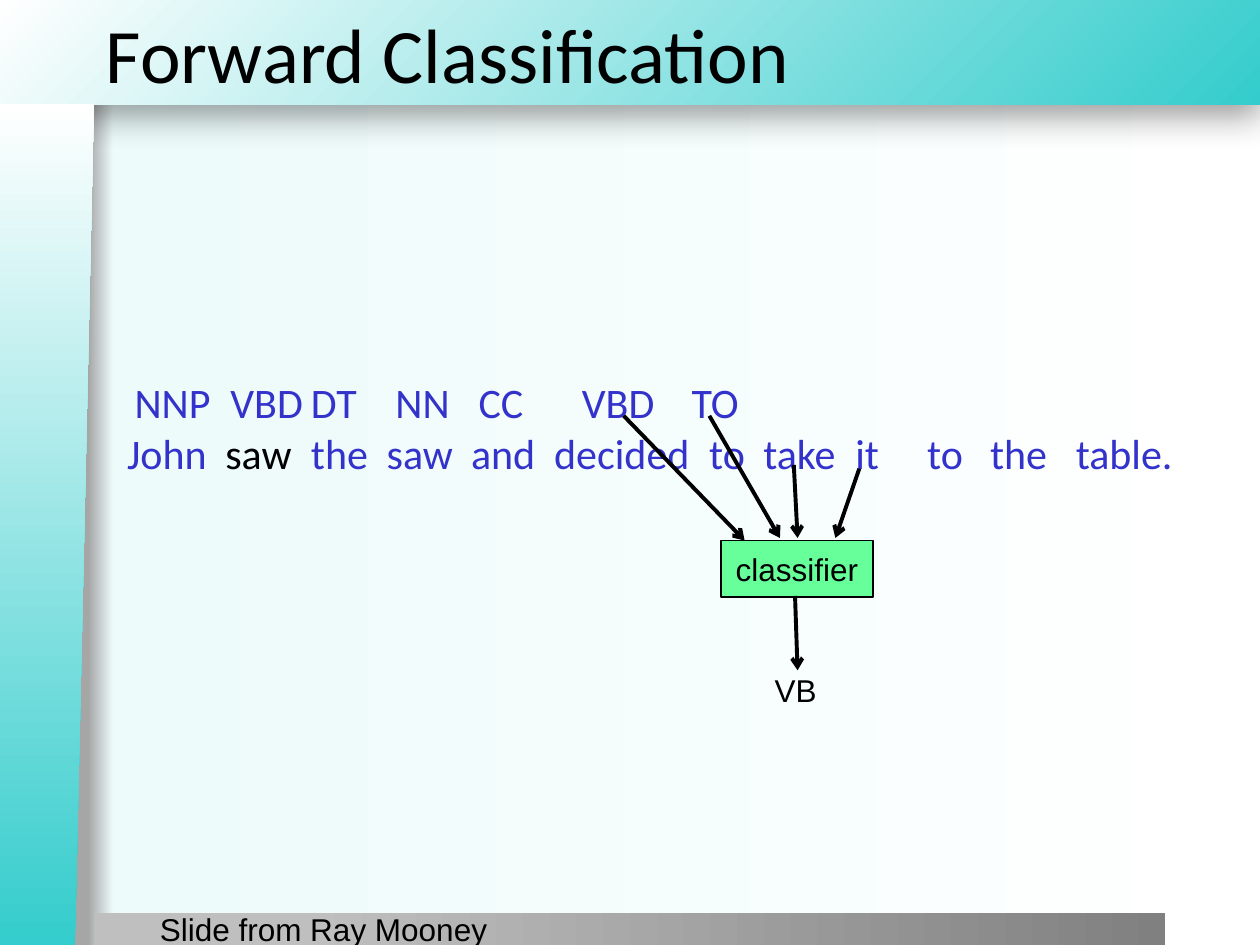
from dataclasses import dataclass
from typing import NamedTuple

from lxml.etree import SubElement
from pptx import Presentation
from pptx.dml.color import RGBColor
from pptx.enum.shapes import MSO_CONNECTOR as Connector, MSO_SHAPE as Preset
from pptx.enum.text import MSO_ANCHOR as Anchor, MSO_AUTO_SIZE as AutoSize, PP_ALIGN as Align
from pptx.oxml.ns import qn
from pptx.util import Inches, Pt


@dataclass(frozen=True)
class Theme:
    teal: str = "34CCCC"
    white: str = "FFFFFF"
    black: str = "000000"
    blue: str = "3333CC"
    green: str = "66FF99"
    edge_gray: str = "A6A6A6"
    pale: str = "EDFBFB"
    light_gray: str = "BFBFBF"
    dark_gray: str = "808080"
    heading_font: str = "Calibri"
    label_font: str = "Arial"
    title_size: int = 44
    sentence_size: int = 24
    label_size: int = 18


class Box(NamedTuple):
    left: float
    top: float
    width: float
    height: float


class Stop(NamedTuple):
    percent: int
    color: str


class Band(NamedTuple):
    preset: Preset
    box: Box
    stops: list[Stop]
    corner: bool = False
    rotation: int = 0
    flipped: bool = False
    shadow: bool = False


class Arrow(NamedTuple):
    start: tuple[float, float]
    end: tuple[float, float]


class Word(NamedTuple):
    text: str
    left: float
    color: str


class Label(NamedTuple):
    text: str
    box: Box
    align: Align


THEME = Theme()
TEAL_FADE = [Stop(0, THEME.teal), Stop(100, THEME.white)]
BACKGROUND = [Stop(7, THEME.edge_gray), Stop(9, THEME.pale), Stop(100, THEME.white)]
BANDS = [
    Band(Preset.RECTANGLE, Box(-0.01, 0, 10.01, 0.83), TEAL_FADE, corner=True, shadow=True),
    Band(Preset.RECTANGLE, Box(0.75, 7.25, 8.5, 0.26),
         [Stop(20, THEME.light_gray), Stop(100, THEME.dark_gray)]),
    Band(Preset.FLOWCHART_MANUAL_INPUT, Box(-2.97, 3.79, 6.68, 0.75), TEAL_FADE,
         rotation=270, flipped=True),
]
TITLE_BOX = Box(0.74, -0.08, 9.26, 1)
SENTENCE_BOX = Box(0.91, 2.94, 8.82, 0.91)
TAGS = [Word(text, left, THEME.blue) for text, left in [
    ("NNP", 0.06), ("VBD", 0.82), ("DT", 1.46), ("NN", 2.13), ("CC", 2.79),
    ("VBD", 3.61), ("TO", 4.48)]]
WORDS = [Word(text, left, THEME.black if left == 0.78 else THEME.blue) for text, left in [
    ("John", 0), ("saw", 0.78), ("the", 1.46), ("saw", 2.06), ("and", 2.73),
    ("decided", 3.39), ("to", 4.62), ("take", 5.05), ("it", 5.78),
    ("to", 6.35), ("the", 6.85), ("table.", 7.53)]]
CLASSIFIER = Label("classifier", Box(5.72, 4.29, 1.21, 0.45), Align.CENTER)
LABELS = [
    Label("VB", Box(5.93, 5.28, 0.77, 0.43), Align.CENTER),
    Label("Slide from Ray Mooney", Box(1.17, 7.17, 3.42, 0.25), Align.LEFT),
]
ARROWS = [
    Arrow((4.95, 3.3), (5.91, 4.29)),
    Arrow((5.63, 3.3), (6.19, 4.27)),
    Arrow((6.3, 3.69), (6.33, 4.27)),
    Arrow((6.82, 3.72), (6.63, 4.27)),
    Arrow((6.31, 4.73), (6.33, 5.32)),
]


def rgb(color: str) -> RGBColor:
    return RGBColor.from_string(color)


def inches(box: Box) -> list[int]:
    return [Inches(value) for value in box]


def add_color(parent, color: str):
    return SubElement(parent, qn("a:srgbClr"), val=color)


def set_gradient(fill, properties, stops: list[Stop], corner: bool = False) -> None:
    fill.gradient()
    gradient = properties.find(qn("a:gradFill"))
    for child in list(gradient):
        gradient.remove(child)
    stop_list = SubElement(gradient, qn("a:gsLst"))
    for stop in stops:
        add_color(SubElement(stop_list, qn("a:gs"), pos=str(stop.percent * 1000)), stop.color)
    if corner:
        focus = SubElement(gradient, qn("a:path"), {"path": "circle"})
        SubElement(focus, qn("a:fillToRect"), l="100000", t="100000")
    else:
        SubElement(gradient, qn("a:lin"), ang="0", scaled="0")


def add_band(slide, band: Band) -> None:
    shape = slide.shapes.add_shape(band.preset, *inches(band.box))
    shape.shadow.inherit = False
    shape.line.fill.background()
    shape.rotation = band.rotation
    properties = shape._element.spPr
    set_gradient(shape.fill, properties, band.stops, band.corner)
    if band.flipped:
        properties.find(qn("a:xfrm")).set("flipV", "1")
    if band.shadow:
        shadow = SubElement(properties.find(qn("a:effectLst")), qn("a:outerShdw"),
                            blurRad=str(Pt(20)), dist=str(Pt(6)), dir="5400000", rotWithShape="0")
        SubElement(add_color(shadow, THEME.black), qn("a:alpha"), val="40000")


def format_run(run, font: str, size: int, color: str) -> None:
    run.font.name = font
    run.font.size = Pt(size)
    run.font.color.rgb = rgb(color)


def fill_label(shape, label: Label) -> None:
    shape.text_frame.text = label.text
    shape.text_frame.word_wrap = True
    paragraph = shape.text_frame.paragraphs[0]
    paragraph.alignment = label.align
    format_run(paragraph.runs[0], THEME.label_font, THEME.label_size, THEME.black)


def add_classifier(slide, label: Label) -> None:
    shape = slide.shapes.add_shape(Preset.RECTANGLE, *inches(label.box))
    shape.shadow.inherit = False
    shape.fill.solid()
    shape.fill.fore_color.rgb = rgb(THEME.green)
    shape.line.color.rgb = rgb(THEME.black)
    shape.line.width = Pt(1)
    fill_label(shape, label)


def add_arrow(slide, arrow: Arrow) -> None:
    points = [Inches(value) for value in (*arrow.start, *arrow.end)]
    connector = slide.shapes.add_connector(Connector.STRAIGHT, *points)
    connector.line.color.rgb = rgb(THEME.black)
    connector.line.width = Pt(2.25)
    SubElement(connector.line._get_or_add_ln(), qn("a:tailEnd"), type="arrow")
    SubElement(connector._element.spPr, qn("a:effectLst"))


def add_word_row(paragraph, words: list[Word]) -> None:
    tabs = SubElement(paragraph._p.get_or_add_pPr(), qn("a:tabLst"))
    for word in words:
        if word.left:
            SubElement(tabs, qn("a:tab"), pos=str(Inches(word.left)), algn="l")
        run = paragraph.add_run()
        run.text = f"\t{word.text}" if word.left else word.text
        format_run(run, THEME.heading_font, THEME.sentence_size, word.color)


def place_title(slide, text: str) -> None:
    title = slide.shapes.title
    title.left, title.top, title.width, title.height = inches(TITLE_BOX)
    frame = title.text_frame
    frame.text = text
    frame.auto_size = AutoSize.NONE
    frame.vertical_anchor = Anchor.MIDDLE
    frame.paragraphs[0].alignment = Align.LEFT
    format_run(frame.paragraphs[0].runs[0], THEME.heading_font, THEME.title_size, THEME.black)
    slide.shapes._spTree.append(title._element)


def main() -> None:
    presentation = Presentation()
    presentation.slide_width, presentation.slide_height = Inches(10), Inches(7.5)
    slide = presentation.slides.add_slide(presentation.slide_layouts[5])
    background_fill = slide.background.fill
    set_gradient(background_fill, slide._element.cSld.find(f"{qn('p:bg')}/{qn('p:bgPr')}"), BACKGROUND)
    for band in BANDS:
        add_band(slide, band)
    place_title(slide, "Forward Classification")
    sentence = slide.shapes.add_textbox(*inches(SENTENCE_BOX)).text_frame
    sentence.word_wrap = True
    add_word_row(sentence.paragraphs[0], TAGS)
    add_word_row(sentence.add_paragraph(), WORDS)
    add_classifier(slide, CLASSIFIER)
    for label in LABELS:
        fill_label(slide.shapes.add_textbox(*inches(label.box)), label)
    for arrow in ARROWS:
        add_arrow(slide, arrow)
    presentation.save("out.pptx")


if __name__ == "__main__":
    main()
